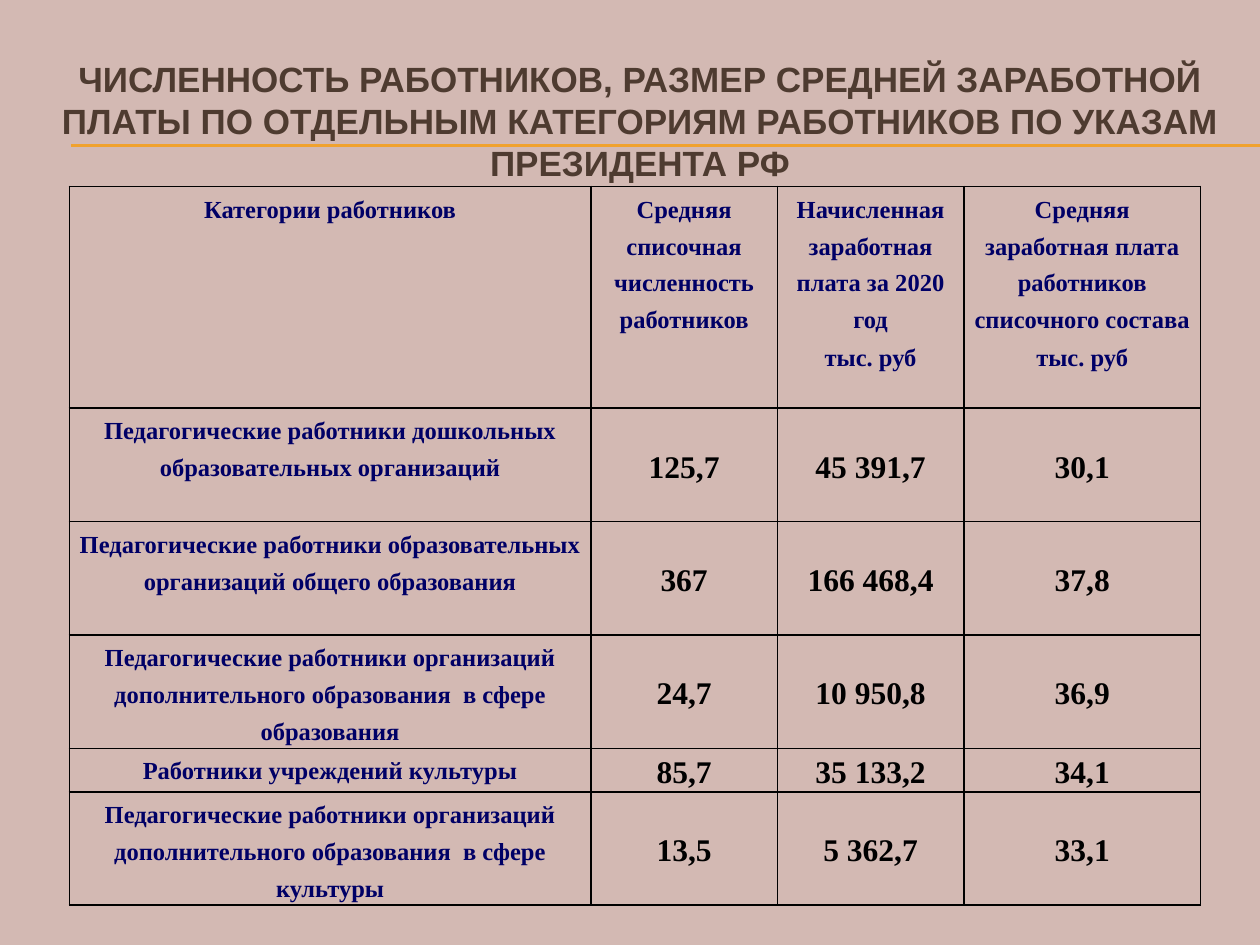
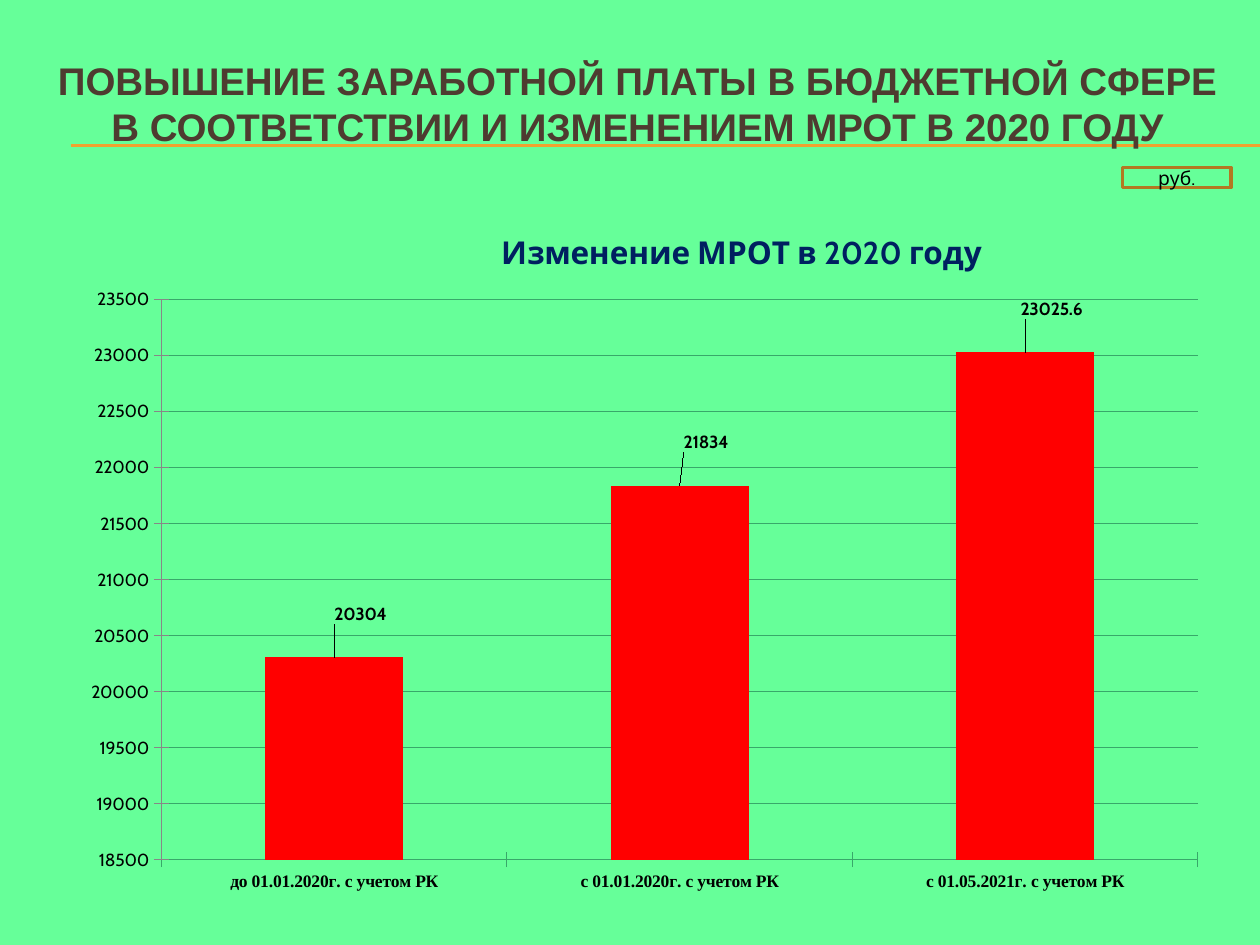
from dataclasses import dataclass

from lxml import etree
from pptx import Presentation
from pptx import util as u
from pptx.chart import data as chart_data
from pptx.dml import color
from pptx.enum import chart as chart_enum, shapes, text
from pptx.oxml import ns


@dataclass(frozen=True)
class Theme:
    rose: str = "D3B9B3"
    green: str = "66FF99"
    rule: str = "F0A22E"
    title: str = "4E3B30"
    label: str = "000066"
    black: str = "000000"
    chart_title: str = "002060"
    bar: str = "FF0000"
    grid: str = "38A86A"
    axis: str = "878787"
    unit_border: str = "B27822"
    title_font: str = "Arial"
    table_font: str = "Times New Roman"
    chart_font: str = "Cabin"
    label_size: int = 14
    value_size: int = 18
    chart_size: int = 10
    unit_size: int = 11


THEME = Theme()

HEADERS = [
    "Категории работников",
    "Средняя списочная численность работников",
    "Начисленная заработная плата за 2020 год\nтыс. руб",
    "Средняя заработная плата работников списочного состава\nтыс. руб",
]
STAFF_ROWS = [
    ("Педагогические работники дошкольных образовательных организаций",
     "125,7", "45 391,7", "30,1"),
    ("Педагогические работники образовательных организаций общего образования",
     "367", "166 468,4", "37,8"),
    ("Педагогические работники организаций дополнительного образования  в сфере образования",
     "24,7", "10 950,8", "36,9"),
    ("Работники учреждений культуры", "85,7", "35 133,2", "34,1"),
    ("Педагогические работники организаций дополнительного образования  в сфере культуры",
     "13,5", "5 362,7", "33,1"),
]
COLUMN_WIDTHS = [4.14, 1.48, 1.48, 1.88]
ROW_HEIGHTS = [1.76, 0.9, 0.9, 0.9, 0.32, 0.9]
WAGES = {
    "до 01.01.2020г. с учетом РК": 20304,
    "с 01.01.2020г. с учетом РК": 21834,
    "с 01.05.2021г. с учетом РК": 23025.6,
}


def rgb(value):
    return color.RGBColor.from_string(value)


def inches(box):
    return [u.Inches(length) for length in box]


def set_font(font, name, size, ink, bold=True):
    font.name, font.size, font.bold = name, u.Pt(size), bold
    font.color.rgb = rgb(ink)


def set_line(line, ink, width):
    line.color.rgb = rgb(ink)
    line.width = u.Pt(width)


def add_page(deck, background, title, title_box, title_size):
    """Background, double rule and title shared by the slides."""
    page = deck.slides.add_slide(deck.slide_layouts[6])
    page.background.fill.solid()
    page.background.fill.fore_color.rgb = rgb(background)

    for top in (1.15, 1.16):
        rule = page.shapes.add_connector(
            shapes.MSO_CONNECTOR.STRAIGHT, *inches((0.56, top, 10, top)))
        set_line(rule.line, THEME.rule, 0.75)
        etree.SubElement(rule._element.spPr, ns.qn("a:effectLst"))

    frame = page.shapes.add_textbox(*inches(title_box)).text_frame
    frame.word_wrap = True
    frame.vertical_anchor = text.MSO_ANCHOR.MIDDLE
    para = frame.paragraphs[0]
    para.text = title
    para.alignment = text.PP_ALIGN.CENTER
    set_font(para.font, THEME.title_font, title_size, THEME.title)
    return page


def set_borders(cell):
    properties = cell._tc.get_or_add_tcPr()
    for position, side in enumerate(("lnL", "lnR", "lnT", "lnB")):
        border = etree.Element(ns.qn(f"a:{side}"), w=str(u.Pt(1)))
        fill = etree.SubElement(border, ns.qn("a:solidFill"))
        etree.SubElement(fill, ns.qn("a:srgbClr"), val=THEME.black)
        properties.insert(position, border)


def fill_cell(cell, content, is_value):
    cell.fill.background()
    set_borders(cell)
    cell.margin_left = cell.margin_right = u.Inches(0.07 if is_value else 0.06)
    cell.margin_top = cell.margin_bottom = 0
    cell.vertical_anchor = text.MSO_ANCHOR.MIDDLE if is_value else text.MSO_ANCHOR.TOP
    cell.text = content
    for para in cell.text_frame.paragraphs:
        para.alignment = text.PP_ALIGN.CENTER
        if is_value:
            para.line_spacing = 1.15
            set_font(para.font, THEME.table_font, THEME.value_size, THEME.black)
        else:
            para.line_spacing, para.space_before = u.Pt(21.1), u.Pt(0.5)
            set_font(para.font, THEME.table_font, THEME.label_size, THEME.label)


def add_staff_table(page, box):
    rows = [HEADERS, *STAFF_ROWS]
    table = page.shapes.add_table(len(rows), len(HEADERS), *inches(box)).table
    table.first_row = table.horz_banding = False
    for column, width in zip(table.columns, COLUMN_WIDTHS):
        column.width = u.Inches(box[2] * width / sum(COLUMN_WIDTHS))
    for row, height in zip(table.rows, ROW_HEIGHTS):
        row.height = u.Inches(box[3] * height / sum(ROW_HEIGHTS))
    for r, contents in enumerate(rows):
        for c, content in enumerate(contents):
            fill_cell(table.cell(r, c), content, is_value=r > 0 and c > 0)


def manual_layout(inner=False, **fractions):
    """A chart layout; fractions are parts of the chart's size."""
    layout = etree.Element(ns.qn("c:layout"))
    manual = etree.SubElement(layout, ns.qn("c:manualLayout"))
    settings = dict(fractions)
    if inner:
        settings = {"layoutTarget": "inner", "xMode": "edge", "yMode": "edge", **settings}
    for name, value in settings.items():
        etree.SubElement(manual, ns.qn(f"c:{name}"), val=str(value))
    return layout


def place(parent, layout, after=None):
    """Put a layout in its schema position, replacing an earlier one."""
    for old in parent.findall(ns.qn("c:layout")):
        parent.remove(old)
    previous = parent.find(ns.qn(after)) if after else None
    parent.insert(0 if previous is None else parent.index(previous) + 1, layout)


def style_axes(chart):
    ticks = chart_enum.XL_TICK_MARK
    values, categories = chart.value_axis, chart.category_axis
    for axis, ink in ((values, THEME.axis), (categories, THEME.grid)):
        axis.major_tick_mark = ticks.CROSS
        axis.minor_tick_mark = ticks.NONE
        set_line(axis.format.line, ink, 0.75)
    values.minimum_scale, values.maximum_scale, values.major_unit = 18500, 23500, 500
    values.has_major_gridlines = True
    set_line(values.major_gridlines.format.line, THEME.grid, 0.75)
    set_font(values.tick_labels.font, THEME.chart_font, THEME.chart_size, THEME.black, False)
    set_font(categories.tick_labels.font, THEME.table_font, THEME.chart_size, THEME.black)
    categories.has_major_gridlines = False


def add_wage_chart(page, box):
    data = chart_data.CategoryChartData()
    data.categories = list(WAGES)
    data.add_series("Series 1", list(WAGES.values()))
    chart = page.shapes.add_chart(
        chart_enum.XL_CHART_TYPE.COLUMN_CLUSTERED, *inches(box), data).chart
    chart.has_legend = False
    set_font(chart.font, THEME.chart_font, THEME.chart_size, THEME.black, False)

    # Title, right of centre, and plot area
    chart.has_title = True
    para = chart.chart_title.text_frame.paragraphs[0]
    para.text = "Изменение МРОТ в 2020 году"
    set_font(para.runs[0].font, THEME.chart_font, 18, THEME.chart_title)
    title = chart.chart_title._element
    layout = manual_layout(xMode="edge", yMode="edge", x=0.37, y=0.04)
    place(title, layout, after="c:tx")
    plot_area = chart._chartSpace.chart.plotArea
    place(plot_area, manual_layout(inner=True, x=0.08, y=0.145, w=0.9, h=0.79))
    style_axes(chart)

    # Bars, each with a label shifted up and to the right
    plot = chart.plots[0]
    plot.vary_by_categories = False
    plot.gap_width = 150
    series = plot.series[0]
    series.format.fill.solid()
    series.format.fill.fore_color.rgb = rgb(THEME.bar)
    for index in range(len(WAGES)):
        label = series.points[index].data_label
        set_font(label.font, THEME.chart_font, THEME.chart_size, THEME.black)
        label.position = chart_enum.XL_LABEL_POSITION.OUTSIDE_END
    for label in series._element.findall(".//" + ns.qn("c:dLbl")):
        place(label, manual_layout(x=0.023, y=-0.04), after="c:idx")


def add_unit_box(page, box):
    unit = page.shapes.add_shape(shapes.MSO_SHAPE.RECTANGLE, *inches(box))
    unit.shadow.inherit = False
    unit.fill.background()
    set_line(unit.line, THEME.unit_border, 2)
    unit.text_frame.vertical_anchor = text.MSO_ANCHOR.MIDDLE
    para = unit.text_frame.paragraphs[0]
    para.text = "руб."
    para.alignment = text.PP_ALIGN.CENTER
    set_font(para.font, THEME.chart_font, THEME.unit_size, THEME.black, False)


def staff_slide(deck):
    page = add_page(
        deck, THEME.rose,
        "ЧИСЛЕННОСТЬ РАБОТНИКОВ, РАЗМЕР СРЕДНЕЙ ЗАРАБОТНОЙ ПЛАТЫ ПО ОТДЕЛЬНЫМ "
        "КАТЕГОРИЯМ РАБОТНИКОВ ПО УКАЗАМ ПРЕЗИДЕНТА РФ",
        (0.33, 0.5, 9.5, 0.92), 20)
    add_staff_table(page, (0.55, 1.48, 8.98, 5.68))


def wage_slide(deck):
    page = add_page(
        deck, THEME.green,
        "ПОВЫШЕНИЕ ЗАРАБОТНОЙ ПЛАТЫ В БЮДЖЕТНОЙ СФЕРЕ В СООТВЕТСТВИИ "
        "И ИЗМЕНЕНИЕМ МРОТ В 2020 ГОДУ",
        (0.31, 0.39, 9.5, 0.86), 22)
    add_wage_chart(page, (0.55, 1.56, 9.14, 5.63))
    add_unit_box(page, (8.91, 1.33, 0.86, 0.16))


def main():
    deck = Presentation()
    deck.slide_width, deck.slide_height = inches((10, 7.5))
    staff_slide(deck)
    wage_slide(deck)
    deck.save("out.pptx")


if __name__ == "__main__":
    main()
